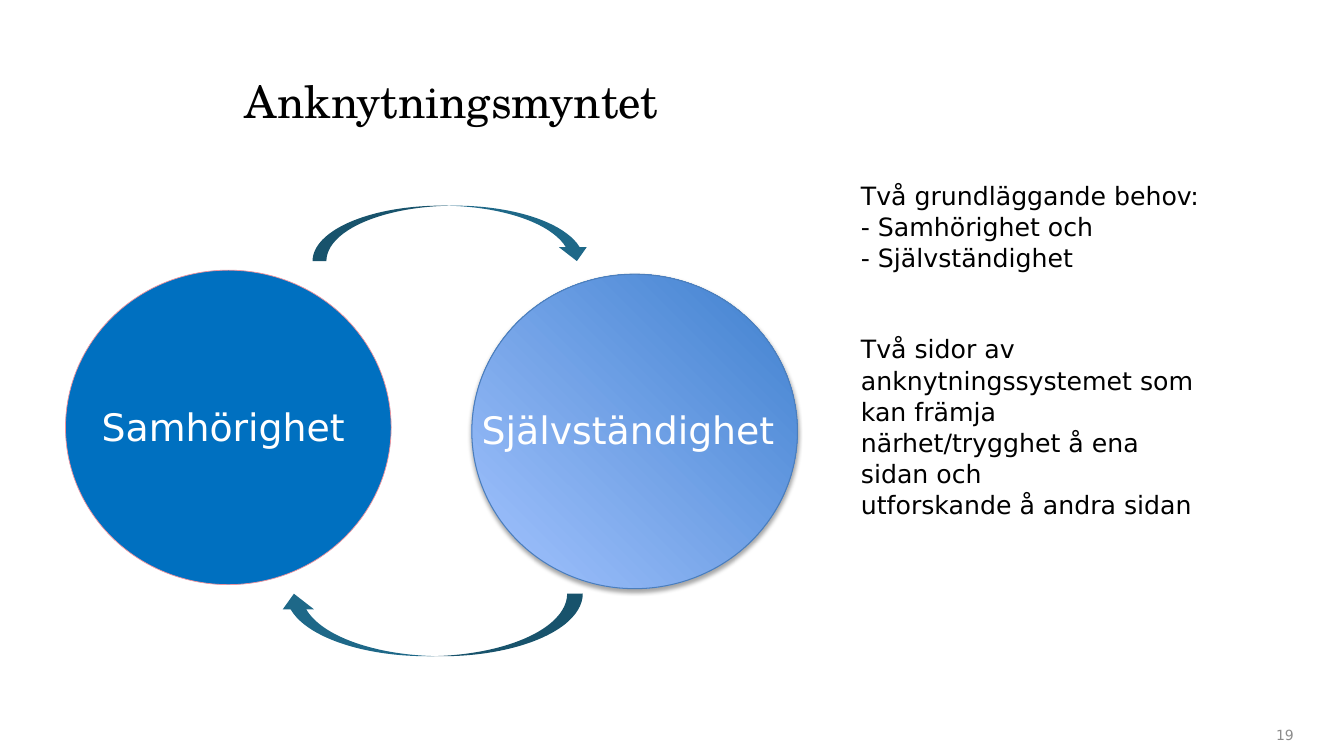
import pptx
import pptx.dml.color
import pptx.enum.shapes
import pptx.enum.text
import pptx.oxml
import pptx.oxml.ns
import pptx.util

Inches = pptx.util.Inches
Pt = pptx.util.Pt
RGBColor = pptx.dml.color.RGBColor
PRESET = pptx.enum.shapes.MSO_SHAPE
ANCHOR = pptx.enum.text.MSO_ANCHOR
NS = pptx.oxml.ns.nsdecls("a")

BLACK = RGBColor(0x00, 0x00, 0x00)
WHITE = RGBColor(0xFF, 0xFF, 0xFF)
BLUE = RGBColor(0x00, 0x70, 0xC0)
PINK = RGBColor(0xEF, 0x93, 0x9D)
EDGE_BLUE = RGBColor(0x4B, 0x7E, 0xBC)
DEEP_BLUE = RGBColor(0x3F, 0x80, 0xCE)
PALE_BLUE = RGBColor(0xA4, 0xC4, 0xFF)
TEAL = RGBColor(0x1E, 0x68, 0x88)
GREY = RGBColor(0x8C, 0x8C, 0x8C)

SANS = "DejaVu Sans"
SERIF = "TeX Gyre Schola"


def add_filled(preset, left, top, width, height, color):
    """Add a preset shape with a plain fill, no outline and no shadow."""
    shape = slide.shapes.add_shape(
        preset, Inches(left), Inches(top), Inches(width), Inches(height))
    shape.shadow.inherit = False
    shape.fill.solid()
    shape.fill.fore_color.rgb = color
    shape.line.fill.background()
    return shape


def add_text(lines, left, top, width, height, size, color, font=SANS):
    """Add a wrapping text box with one paragraph per line; return its frame."""
    box = slide.shapes.add_textbox(
        Inches(left), Inches(top), Inches(width), Inches(height))
    frame = box.text_frame
    frame.word_wrap = True
    frame.text = "\n".join(lines)
    for paragraph in frame.paragraphs:
        paragraph.font.size = Pt(size)
        paragraph.font.name = font
        paragraph.font.color.rgb = color
    return frame


presentation = pptx.Presentation()
presentation.slide_width = Inches(13.33)
presentation.slide_height = Inches(7.5)
slide = presentation.slides.add_slide(presentation.slide_layouts[6])

# The two sides of the coin
togetherness = add_filled(PRESET.OVAL, 0.65, 2.68, 3.23, 3.12, BLUE)
togetherness.line.color.rgb = PINK
togetherness.line.width = Pt(0.5)
add_text(["Samhörighet"], 0.91, 3.96, 2.7, 0.64, 27, WHITE)

independence = add_filled(PRESET.OVAL, 4.68, 2.72, 3.23, 3.12, DEEP_BLUE)
independence.line.color.rgb = EDGE_BLUE
independence.line.width = Pt(0.75)
properties = independence.element.spPr
solid_fill = properties.find(pptx.oxml.ns.qn("a:solidFill"))
properties.replace(solid_fill, pptx.oxml.parse_xml(
    f'<a:gradFill {NS} rotWithShape="1"><a:gsLst>'
    f'<a:gs pos="0"><a:srgbClr val="{DEEP_BLUE}"/></a:gs>'
    f'<a:gs pos="100000"><a:srgbClr val="{PALE_BLUE}"/></a:gs></a:gsLst>'
    '<a:path path="circle"><a:fillToRect l="100000" b="100000"/></a:path>'
    '</a:gradFill>'))
effects = properties.find(pptx.oxml.ns.qn("a:effectLst"))
effects.append(pptx.oxml.parse_xml(
    f'<a:outerShdw {NS} blurRad="{Pt(3.1)}" dist="{Pt(1.8)}" dir="5400000" '
    f'rotWithShape="0"><a:srgbClr val="{BLACK}"><a:alpha val="35000"/>'
    '</a:srgbClr></a:outerShdw>'))
add_text(["Självständighet"], 4.68, 3.99, 3.14, 0.58, 27, WHITE)

# Arrows circling between them
add_filled(PRESET.CURVED_DOWN_ARROW, 3.1, 2.04, 2.76, 0.55, TEAL)
return_arrow = add_filled(PRESET.CURVED_LEFT_ARROW, 3.96, 4.69, 0.62, 3.02, TEAL)
return_arrow.rotation = 90

title = add_text(["Anknytningsmyntet"], 1.83, 0.68, 4.88, 0.94, 32, BLACK, SERIF)
title.paragraphs[0]._p.get_or_add_pPr().set("indent", str(Inches(0.5)))

needs = add_text(
    ["Två grundläggande behov: - Samhörighet och",
     "- Självständighet",
     "Två sidor av anknytningssystemet som kan främja "
     "närhet/trygghet å ena sidan och",
     "utforskande å andra sidan"],
    8.44, 1.73, 3.59, 3.43, 18, BLACK)
for paragraph in needs.paragraphs:
    paragraph.line_spacing = 1.03
needs.paragraphs[2].space_before = Pt(43)

page_number = add_text(["19"], 9.93, 7.09, 3, 0.4, 10, GREY)
page_number.vertical_anchor = ANCHOR.MIDDLE
page_number.paragraphs[0].alignment = pptx.enum.text.PP_ALIGN.RIGHT

presentation.save("out.pptx")
